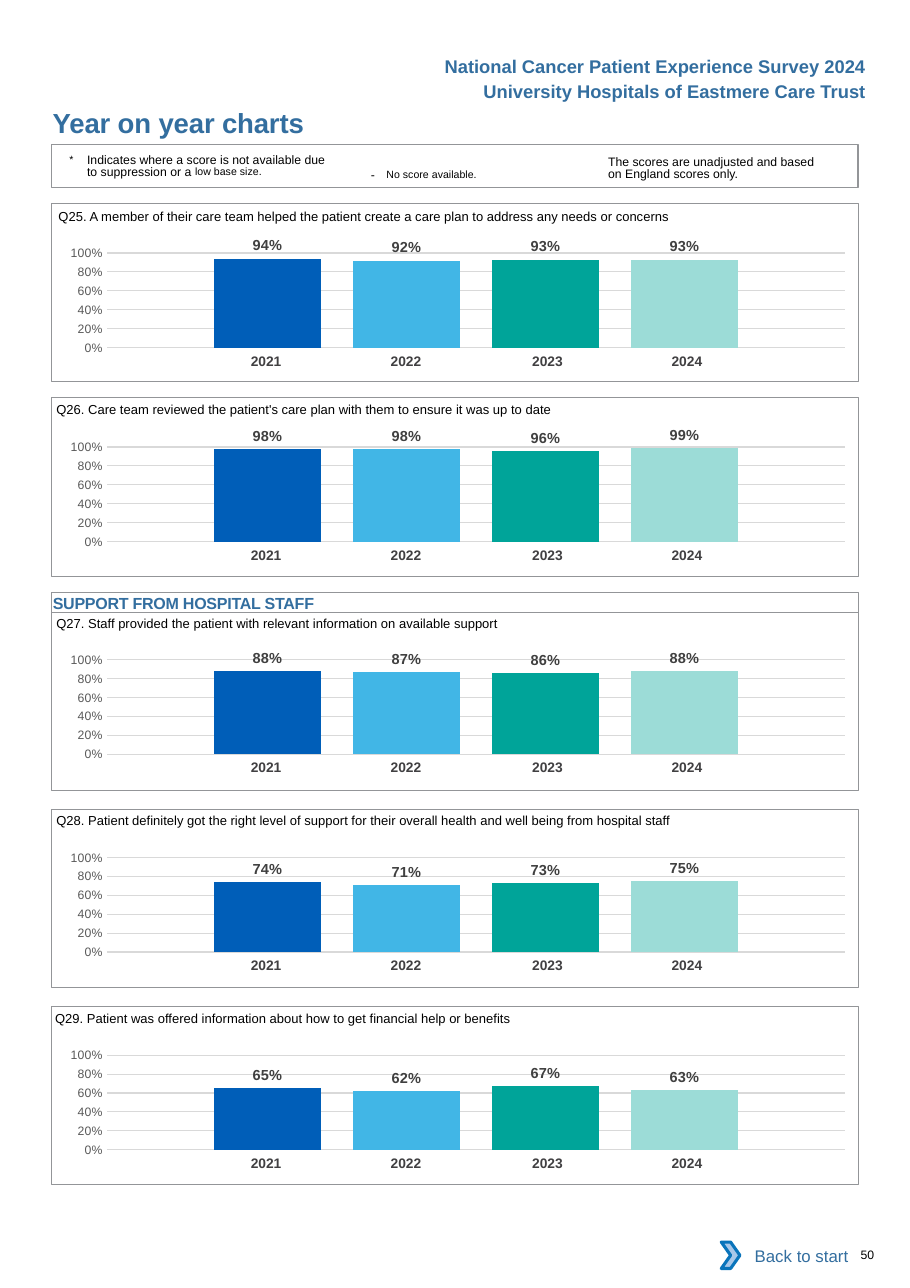
import pptx
import pptx.chart.data
import pptx.dml.color
import pptx.enum.chart
import pptx.enum.shapes
import pptx.enum.text
import pptx.util
from lxml import etree

Pt = pptx.util.Pt
ALIGN = pptx.enum.text.PP_ALIGN
ANCHOR = pptx.enum.text.MSO_ANCHOR
SHAPE = pptx.enum.shapes.MSO_SHAPE

# Content
HEADINGS = [
    ("National Cancer Patient Experience Survey 2024", 32.6),
    ("University Hospitals of Eastmere Care Trust", 49),
]
TITLE = "Year on year charts"
SECTION = "SUPPORT FROM HOSPITAL STAFF"
SUPPRESSED_NOTE = [
    ("*\t", {"size": 12, "baseline": 3}),
    ("Indicates where a score is not available due to suppression or a ", {}),
    ("low base size.", {"size": 12, "baseline": 7}),
]
NO_SCORE_NOTE = [
    ("- ", {"spacing": 2.6}),
    ("No score available.", {"size": 12, "baseline": 3}),
]
UNADJUSTED_NOTE = "The scores are unadjusted and based on England scores only."
BACK_LABEL = "Back to start"
PAGE_NUMBER = "50"
YEARS = ["2021", "2022", "2023", "2024"]
# question, scores, panel top, chart top, question left and top
QUESTIONS = [
    ("Q25. A member of their care team helped the patient create a care plan "
     "to address any needs or concerns",
     [0.94, 0.92, 0.93, 0.93], 132.7, 151.9, 38.2, 129.6),
    ("Q26. Care team reviewed the patient's care plan with them to ensure "
     "it was up to date",
     [0.98, 0.98, 0.96, 0.99], 260, 278.6, 36.8, 255.6),
    ("Q27. Staff provided the patient with relevant information on available support",
     [0.88, 0.87, 0.86, 0.88], 400.2, 417.6, 36.8, 395.6),
    ("Q28. Patient definitely got the right level of support for their overall "
     "health and well being from hospital staff",
     [0.74, 0.71, 0.73, 0.75], 529, 546.9, 36.8, 524.2),
    ("Q29. Patient was offered information about how to get financial help or benefits",
     [0.65, 0.62, 0.67, 0.63], 657.6, 676.1, 36, 653.8),
]

THEME = {
    "font": "Arial", "chart_font": "Calibri",
    "black": "000000", "blue": "336E9F", "border": "939598", "white": "FFFFFF",
    "year": "414042", "label": "404040", "axis": "595959", "grid": "D9D9D9",
    "chevron": "A8C7E9", "chevron_line": "0A74BB",
    "bars": ["005EB8", "41B6E6", "00A499", "9CDCD7"],
    "title_size": 18, "heading_size": 12, "link_size": 11, "section_size": 10.5,
    "label_size": 9.5, "year_size": 9, "question_size": 8.5, "small_size": 8,
}

# Layout
PANEL_LEFT, PANEL_WIDTH, PANEL_HEIGHT = 33.8, 527, 116.6
CHART_LEFT, CHART_HEIGHT = 28.4, 92.9
PLOT = {"x": 0.079, "y": 0.145, "w": 0.915, "h": 0.666}
YEARS_LEFT, YEARS_DROP, YEARS_HEIGHT = 124.6, 75.7, 19.4
YEAR_COLUMNS = [(91.4, 0), (91.4, 0), (96.5, 2.9), (91.4, 8.6)]  # width, right margin
NO_STYLE = "{2D5ABB26-0587-4C30-8999-92F81FD0307C}"


def color(name):
    return pptx.dml.color.RGBColor.from_string(THEME.get(name, name))


def set_font(font, size, name, bold=False, face="font"):
    font.size, font.bold, font.name = Pt(size), bold, THEME[face]
    font.color.rgb = color(name)


def write(frame, text, size=THEME["small_size"], name="black", bold=False,
          align=ALIGN.LEFT, anchor=ANCHOR.TOP, margins=(0, 0, 0, 0), wrap=True,
          spacing=0, line=None, hanging=0):
    """Fill a text frame with a string, or with (text, format) runs."""
    frame.word_wrap, frame.vertical_anchor = wrap, anchor
    (frame.margin_left, frame.margin_top,
     frame.margin_right, frame.margin_bottom) = map(Pt, margins)
    paragraph = frame.paragraphs[0]
    paragraph.alignment = align
    if line:
        paragraph.line_spacing = Pt(line)
    if hanging:
        properties = paragraph._p.get_or_add_pPr()
        properties.set("marL", str(Pt(hanging)))
        properties.set("indent", str(-Pt(hanging)))
    for words, changes in [(text, {})] if isinstance(text, str) else text:
        run = paragraph.add_run()
        run.text = words
        set_font(run.font, changes.get("size", size), name, bold)
        properties = run._r.get_or_add_rPr()
        properties.set("spc", str(round(changes.get("spacing", spacing) * 100)))
        properties.set("baseline", str(changes.get("baseline", 0) * 1000))


def add_text(shapes, box, text, **format):
    write(shapes.add_textbox(*map(Pt, box)).text_frame, text, **format)


def add_box(shapes, box, kind=SHAPE.RECTANGLE, fill=None, line=None, width=0.5):
    shape = shapes.add_shape(kind, *map(Pt, box))
    shape.shadow.inherit = False
    for part, name in ((shape.fill, fill), (shape.line.fill, line)):
        if name:
            part.solid()
            part.fore_color.rgb = color(name)
        else:
            part.background()
    if line:
        shape.line.width = Pt(width)
    return shape


def add_score_chart(shapes, scores, top):
    data = pptx.chart.data.CategoryChartData(number_format="0%")
    data.categories = ["1"]
    for number, score in enumerate(scores, 1):
        data.add_series(f"Series {number}", [score])
    chart = shapes.add_chart(
        pptx.enum.chart.XL_CHART_TYPE.COLUMN_CLUSTERED,
        *map(Pt, (CHART_LEFT, top, PANEL_WIDTH, CHART_HEIGHT)), data).chart
    set_font(chart.font, 10, "black", face="chart_font")
    chart.has_legend = chart.has_title = False
    plot = chart.plots[0]
    plot.gap_width, plot.overlap, plot.vary_by_categories = 200, -30, False
    for series, bar in zip(plot.series, THEME["bars"]):
        series.format.fill.solid()
        series.format.fill.fore_color.rgb = color(bar)
    plot.has_data_labels = True
    labels = plot.data_labels
    labels.show_value = True
    labels.position = pptx.enum.chart.XL_LABEL_POSITION.OUTSIDE_END
    labels.number_format, labels.number_format_is_linked = "0%", False
    set_font(labels.font, THEME["label_size"], "label", bold=True)

    # Axes
    chart.category_axis.visible = False
    axis = chart.value_axis
    axis.minimum_scale, axis.maximum_scale, axis.major_unit = 0, 1, 0.2
    axis.major_tick_mark = pptx.enum.chart.XL_TICK_MARK.NONE
    axis.format.line.fill.background()
    axis.major_gridlines.format.line.color.rgb = color("grid")
    axis.major_gridlines.format.line.width = Pt(0.75)
    axis.tick_labels.number_format = "0%"
    axis.tick_labels.number_format_is_linked = False
    set_font(axis.tick_labels.font, THEME["small_size"], "axis")

    # Fixed inner plot area
    area = chart._chartSpace.chart.plotArea
    chart_tag = area.tag.replace("plotArea", "")
    for old in area.findall(chart_tag + "layout"):
        area.remove(old)
    layout = etree.Element(chart_tag + "layout")
    manual = etree.SubElement(layout, chart_tag + "manualLayout")
    settings = {"layoutTarget": "inner", "xMode": "edge", "yMode": "edge", **PLOT}
    for tag, value in settings.items():
        etree.SubElement(manual, chart_tag + tag).set("val", str(value))
    area.insert(0, layout)


def add_years(shapes, top):
    width = sum(column for column, margin in YEAR_COLUMNS)
    table = shapes.add_table(
        1, len(YEARS), *map(Pt, (YEARS_LEFT, top, width, YEARS_HEIGHT))).table
    table.first_row = table.horz_banding = False
    table._tbl.tblPr[0].text = NO_STYLE
    for index, (year, (width, right)) in enumerate(zip(YEARS, YEAR_COLUMNS)):
        table.columns[index].width = Pt(width)
        cell = table.cell(0, index)
        cell.fill.background()
        cell.margin_left, cell.margin_right = Pt(7.2), Pt(right)
        cell.margin_top = cell.margin_bottom = Pt(3.6)
        paragraph = cell.text_frame.paragraphs[0]
        paragraph.text, paragraph.alignment = year, ALIGN.CENTER
        set_font(paragraph.runs[0].font, THEME["year_size"], "year", bold=True)


def main():
    presentation = pptx.Presentation()
    presentation.slide_width, presentation.slide_height = Pt(594.72), Pt(841.68)
    slide = presentation.slides.add_slide(presentation.slide_layouts[6])
    shapes = slide.shapes

    # Headings and title
    for heading, top in HEADINGS:
        add_text(shapes, (252, top, 321.1, 21.6), heading, size=THEME["heading_size"],
                 name="blue", bold=True, align=ALIGN.RIGHT, margins=(7.2, 3.6, 7.2, 3.6))
    add_text(shapes, (34.5, 69.2, 324, 21.6), TITLE, size=THEME["title_size"],
             name="blue", bold=True, spacing=-0.1)

    # Notes
    notes = shapes.add_group_shape().shapes
    add_box(notes, (PANEL_LEFT, 94.3, PANEL_WIDTH, 28.1), line="border", width=0.75)
    add_text(notes, (45.4, 99.4, 171.5, 20), SUPPRESSED_NOTE,
             margins=(0, 2.2, 0, 0), line=8.1, hanging=11.5)
    add_text(notes, (235.4, 101.5, 131.8, 17.3), NO_SCORE_NOTE,
             margins=(7.2, 3.6, 7.2, 3.6))
    add_text(notes, (397.4, 99.9, 140, 19.4), UNADJUSTED_NOTE,
             margins=(0, 2.2, 0, 0), line=8.1)

    # Question panels
    for question, scores, panel_top, chart_top, left, top in QUESTIONS:
        add_score_chart(shapes, scores, chart_top)
        add_years(shapes, chart_top + YEARS_DROP)
        add_box(shapes, (PANEL_LEFT, panel_top, PANEL_WIDTH, PANEL_HEIGHT), line="border")
        add_text(shapes, (left, top, 520, 17.3), question,
                 size=THEME["question_size"], margins=(0, 6.5, 0, 0))
    section = add_box(shapes, (PANEL_LEFT, 387.2, PANEL_WIDTH, 13), line="border")
    write(section.text_frame, SECTION, size=THEME["section_size"], name="blue",
          bold=True, spacing=-0.15, margins=(0.7, 0.7, 0, 0))

    # Footer
    footer = shapes.add_group_shape().shapes
    link = add_box(footer, (476.6, 805.2, 85, 30.2), fill="white")
    write(link.text_frame, BACK_LABEL, size=THEME["link_size"], name="blue",
          align=ALIGN.RIGHT, anchor=ANCHOR.MIDDLE, margins=(7.2, 3.6, 7.2, 3.6))
    add_box(footer, (471.4, 811.7, 12.2, 17.3), SHAPE.CHEVRON,
            fill="chevron", line="chevron_line", width=2)
    add_text(shapes, (562.5, 815.3, 30, 9.4), PAGE_NUMBER)

    presentation.save("out.pptx")


if __name__ == "__main__":
    main()
